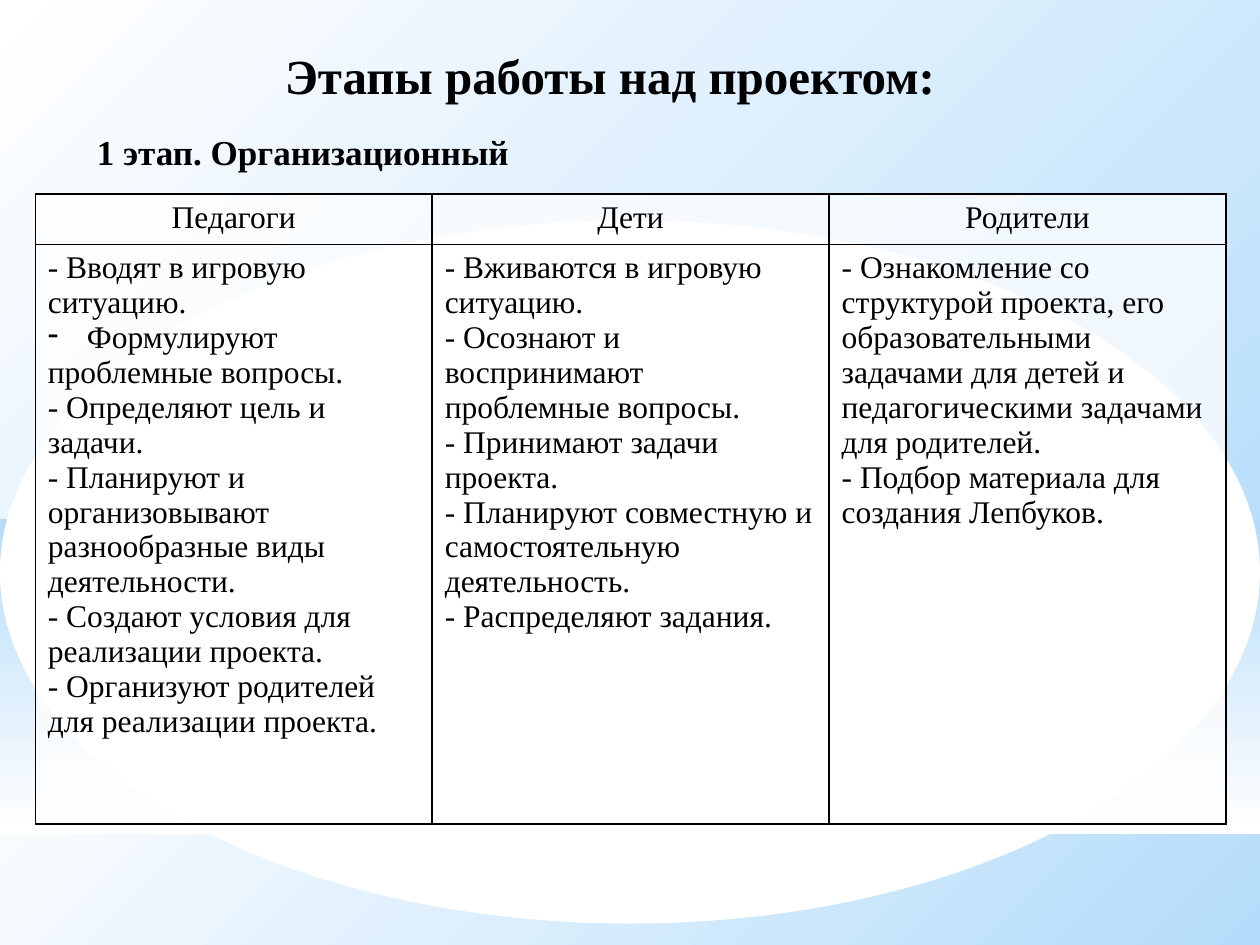
from dataclasses import dataclass

from lxml import etree
from pptx import Presentation
from pptx.dml.color import RGBColor
from pptx.enum.shapes import MSO_SHAPE
from pptx.enum.text import MSO_ANCHOR, PP_ALIGN
from pptx.oxml.ns import qn
from pptx.util import Inches, Pt

RECTANGLE, OVAL = MSO_SHAPE.RECTANGLE, MSO_SHAPE.OVAL
LEFT, CENTER = PP_ALIGN.LEFT, PP_ALIGN.CENTER
TOP = MSO_ANCHOR.TOP


@dataclass(frozen=True)
class Theme:
    font: str = "Times New Roman"
    text: RGBColor = RGBColor(0, 0, 0)
    white: RGBColor = RGBColor(255, 255, 255)
    sky: RGBColor = RGBColor(0xB4, 0xDC, 0xFA)
    title_size: int = 28
    subtitle_size: int = 20
    table_size: int = 18
    border: float = 1
    cell_opacity: int = 75


THEME = Theme()


def write(frame, lines, size=THEME.table_size, bold=False, align=LEFT):
    """Fill a text frame; a line that starts with a tab gets a real dash bullet."""
    frame.word_wrap = True
    for index, line in enumerate(lines):
        para = frame.paragraphs[0] if index == 0 else frame.add_paragraph()
        para.alignment = align
        if line.startswith("\t"):
            properties = para._p.get_or_add_pPr()
            properties.set("marL", str(Inches(0.31)))
            properties.set("indent", str(-Inches(0.31)))
            etree.SubElement(properties, qn("a:buFontTx"))
            etree.SubElement(properties, qn("a:buChar"), char="-")
        span = para.add_run()
        span.text = line.strip()
        span.font.name = THEME.font
        span.font.size = Pt(size)
        span.font.bold = bold
        span.font.color.rgb = THEME.text


def style_cell(cell):
    """Give a cell thin dark borders and a translucent white fill."""
    properties = cell._tc.get_or_add_tcPr()
    for side in ("lnL", "lnR", "lnT", "lnB"):
        line = etree.SubElement(properties, qn(f"a:{side}"), w=str(Pt(THEME.border)))
        solid = etree.SubElement(line, qn("a:solidFill"))
        etree.SubElement(solid, qn("a:srgbClr"), val=str(THEME.text))
    cell.fill.solid()
    cell.fill.fore_color.rgb = THEME.white
    color = properties.find(qn("a:solidFill")).find(qn("a:srgbClr"))
    etree.SubElement(color, qn("a:alpha"), val=str(THEME.cell_opacity * 1000))


deck = Presentation()
deck.slide_width, deck.slide_height = Inches(10), Inches(7.5)
page = deck.slides.add_slide(deck.slide_layouts[5])

# Backdrop: shape, top, height, gradient colours, gradient angle
backdrop = [
    (RECTANGLE, 5.58, 1.92, (THEME.white, THEME.sky), 315),
    (RECTANGLE, 0, 5.58, (THEME.white, THEME.sky), 315),
    (RECTANGLE, 4.12, 2.5, (THEME.sky, THEME.white), 270),
    (OVAL, 1.75, 5.58, None, None),
]
for kind, top, height, colors, angle in backdrop:
    shape = page.shapes.add_shape(kind, 0, Inches(top), deck.slide_width, Inches(height))
    shape.shadow.inherit = False
    shape.line.fill.background()
    if colors:
        shape.fill.gradient()
        shape.fill.gradient_angle = angle
        for stop, color in zip(shape.fill.gradient_stops, colors):
            stop.color.rgb = color
    else:
        shape.fill.solid()
        shape.fill.fore_color.rgb = THEME.white

# Headings; the title placeholder is raised above the backdrop
title = page.shapes.title
page.shapes._spTree.append(title._element)
title.left, title.top = Inches(1.85), Inches(0.31)
title.width, title.height = Inches(5.98), Inches(0.57)
title.text_frame.vertical_anchor = TOP
write(title.text_frame, ["Этапы работы над проектом:"],
      size=THEME.title_size, bold=True, align=CENTER)

subtitle = page.shapes.add_textbox(Inches(0.67), Inches(0.99), Inches(3.94), Inches(0.43))
write(subtitle.text_frame, ["1 этап. Организационный"], size=THEME.subtitle_size, bold=True)

# Table: one column for each group of participants
columns = {
    "Педагоги": [
        "- Вводят в игровую ситуацию.",
        "\tФормулируют",
        "проблемные вопросы.",
        "- Определяют цель и задачи.",
        "- Планируют и организовывают разнообразные виды деятельности.",
        "- Создают условия для реализации проекта.",
        "- Организуют родителей для реализации проекта.",
    ],
    "Дети": [
        "- Вживаются в игровую ситуацию.",
        "- Осознают и воспринимают проблемные вопросы.",
        "- Принимают задачи проекта.",
        "- Планируют совместную и самостоятельную деятельность.",
        "- Распределяют задания.",
    ],
    "Родители": [
        "- Ознакомление со структурой проекта, его образовательными задачами "
        "для детей и педагогическими задачами для родителей.",
        "- Подбор материала для создания Лепбуков.",
    ],
}
table = page.shapes.add_table(2, len(columns), Inches(0.28), Inches(1.54),
                              Inches(9.45), Inches(5)).table
table.first_row = table.horz_banding = False
table.rows[0].height, table.rows[1].height = Inches(0.4), Inches(4.6)
for index, (heading, tasks) in enumerate(columns.items()):
    table.columns[index].width = Inches(3.15)
    header, body = table.cell(0, index), table.cell(1, index)
    style_cell(header)
    style_cell(body)
    write(header.text_frame, [heading], align=CENTER)
    write(body.text_frame, tasks)

deck.save("out.pptx")
